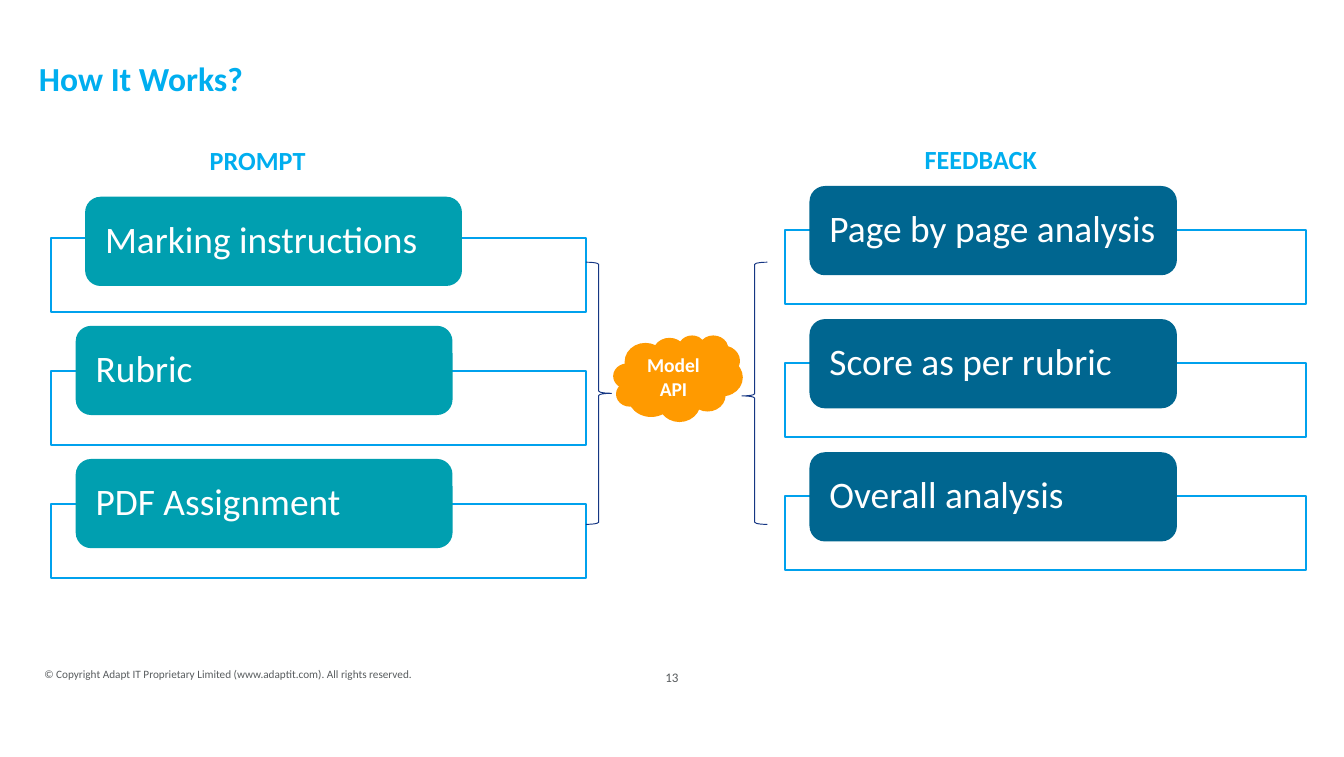
"""Build the "How It Works?" slide: prompt inputs, a model API and its feedback."""
from dataclasses import dataclass

from lxml import etree
from pptx import Presentation
from pptx import util as u
from pptx.dml import color
from pptx.enum import shapes, text
from pptx.oxml import ns

FONT = "Calibri"
SKY, FRAME, NAVY, WHITE, GREY = "00AEEF", "00A1ED", "153683", "FFFFFF", "585C5E"
TEAL, BLUE, ORANGE = "009FB0", "006690", "FF9A00"
FRAME_H, PILL_H, PITCH = 0.55, 0.65, 0.99
LEFT, CENTER = text.PP_ALIGN.LEFT, text.PP_ALIGN.CENTER
SHAPE = shapes.MSO_SHAPE


@dataclass
class Box:
    """Hold a position and size in inches."""
    x: float
    y: float
    w: float
    h: float

    def emu(self) -> tuple:
        """Return the box as lengths."""
        return tuple(u.Inches(v) for v in (self.x, self.y, self.w, self.h))


@dataclass
class Style:
    """Describe how a line of text looks."""
    size: float
    colour: str
    bold: bool = False
    align: int = LEFT
    spacing: object = None


@dataclass
class Pill:
    """Describe one labelled pill."""
    label: str
    x: float
    y: float


@dataclass
class Column:
    """Describe a heading above a stack of framed pills."""
    heading: str
    heading_box: Box
    frame: Box
    pill_w: float
    fill: str
    pills: list


HEADING = Style(14, SKY, True, LEFT, u.Pt(22.6))
COLUMNS = [
    Column("PROMPT", Box(1.56, 0.99, 1.21, 0.32), Box(0.38, 1.77, 3.98, FRAME_H), 2.79, TEAL,
           [Pill("Marking instructions", 0.64, 1.47), Pill("Rubric", 0.57, 2.43),
            Pill("PDF Assignment", 0.57, 3.42)]),
    Column("FEEDBACK", Box(6.88, 0.98, 1.56, 0.32), Box(5.84, 1.71, 3.88, FRAME_H), 2.72, BLUE,
           [Pill(label, 6.03, 1.39 + i * PITCH) for i, label in enumerate(
               ("Page by page analysis", "Score as per rubric", "Overall analysis"))]),
]


def rgb(value: str) -> color.RGBColor:
    """Turn a hex string into a colour."""
    return color.RGBColor.from_string(value)


def write(sp, words: str, style: Style, inset: tuple = (0, 0)) -> None:
    """Write one run into a shape, with horizontal and vertical insets."""
    tf = sp.text_frame
    tf.word_wrap = True
    tf.auto_size = text.MSO_AUTO_SIZE.NONE
    tf.vertical_anchor = text.MSO_ANCHOR.MIDDLE
    tf.margin_left = tf.margin_right = u.Inches(inset[0])
    tf.margin_top = tf.margin_bottom = u.Inches(inset[1])
    p = tf.paragraphs[0]
    p.alignment = style.align
    p.line_spacing = style.spacing
    r = p.add_run()
    r.text = words
    r.font.name, r.font.size, r.font.bold = FONT, u.Pt(style.size), style.bold
    r.font.color.rgb = rgb(style.colour)


def add_text(s, box: Box, words: str, style: Style) -> None:
    """Add a text box."""
    write(s.shapes.add_textbox(*box.emu()), words, style)


def add_shape(s, kind: int, box: Box, fill: str | None, line: str, width: float = 1):
    """Add a flat preset shape."""
    sp = s.shapes.add_shape(kind, *box.emu())
    sp.shadow.inherit = False
    if fill:
        sp.fill.solid()
        sp.fill.fore_color.rgb = rgb(fill)
    else:
        sp.fill.background()
    sp.line.color.rgb = rgb(line)
    sp.line.width = u.Pt(width)
    return sp


def add_column(s, col: Column) -> None:
    """Add a heading with its framed pills."""
    add_text(s, col.heading_box, col.heading, HEADING)
    for i, pill in enumerate(col.pills):
        f = col.frame
        frame = add_shape(s, SHAPE.RECTANGLE, Box(f.x, f.y + i * PITCH, f.w, f.h), WHITE, FRAME)
        solid = frame.fill._xPr.find(ns.qn("a:solidFill"))
        etree.SubElement(solid[0], ns.qn("a:alpha")).set("val", "90000")
        box = Box(pill.x, pill.y, col.pill_w, PILL_H)
        sp = add_shape(s, SHAPE.ROUNDED_RECTANGLE, box, col.fill, col.fill)
        write(sp, pill.label, Style(20, WHITE, spacing=0.9), (0.11, 0))


def main() -> None:
    """Build and save the slide."""
    prs = Presentation()
    prs.slide_width, prs.slide_height = u.Inches(10), u.Inches(5.63)
    s = prs.slides.add_slide(prs.slide_layouts[5])
    title = s.shapes.title
    title.left, title.top, title.width, title.height = Box(0.29, 0.31, 5.37, 0.53).emu()
    write(title, "How It Works?", Style(18, SKY, True, LEFT, u.Pt(22.6)))

    cloud = add_shape(s, SHAPE.CLOUD, Box(4.57, 2.5, 0.95, 0.63), ORANGE, ORANGE)
    write(cloud, "Model API", Style(10.5, WHITE, True, CENTER), (0.1, 0.05))
    for col in COLUMNS:
        add_column(s, col)
    add_shape(s, SHAPE.RIGHT_BRACE, Box(4.36, 1.95, 0.19, 1.95), None, NAVY, 0.5)
    brace = add_shape(s, SHAPE.LEFT_BRACE, Box(5.52, 1.95, 0.19, 1.95), None, NAVY, 0.5)
    brace.adjustments[1] = 0.51

    add_text(s, Box(0.33, 4.78, 3.45, 0.46),
             "© Copyright Adapt IT Proprietary Limited (www.adaptit.com). All rights reserved.",
             Style(6, GREY))
    add_text(s, Box(4.31, 4.78, 1.38, 0.52), "13", Style(7, GREY, align=CENTER))
    prs.save("out.pptx")


if __name__ == "__main__":
    main()
